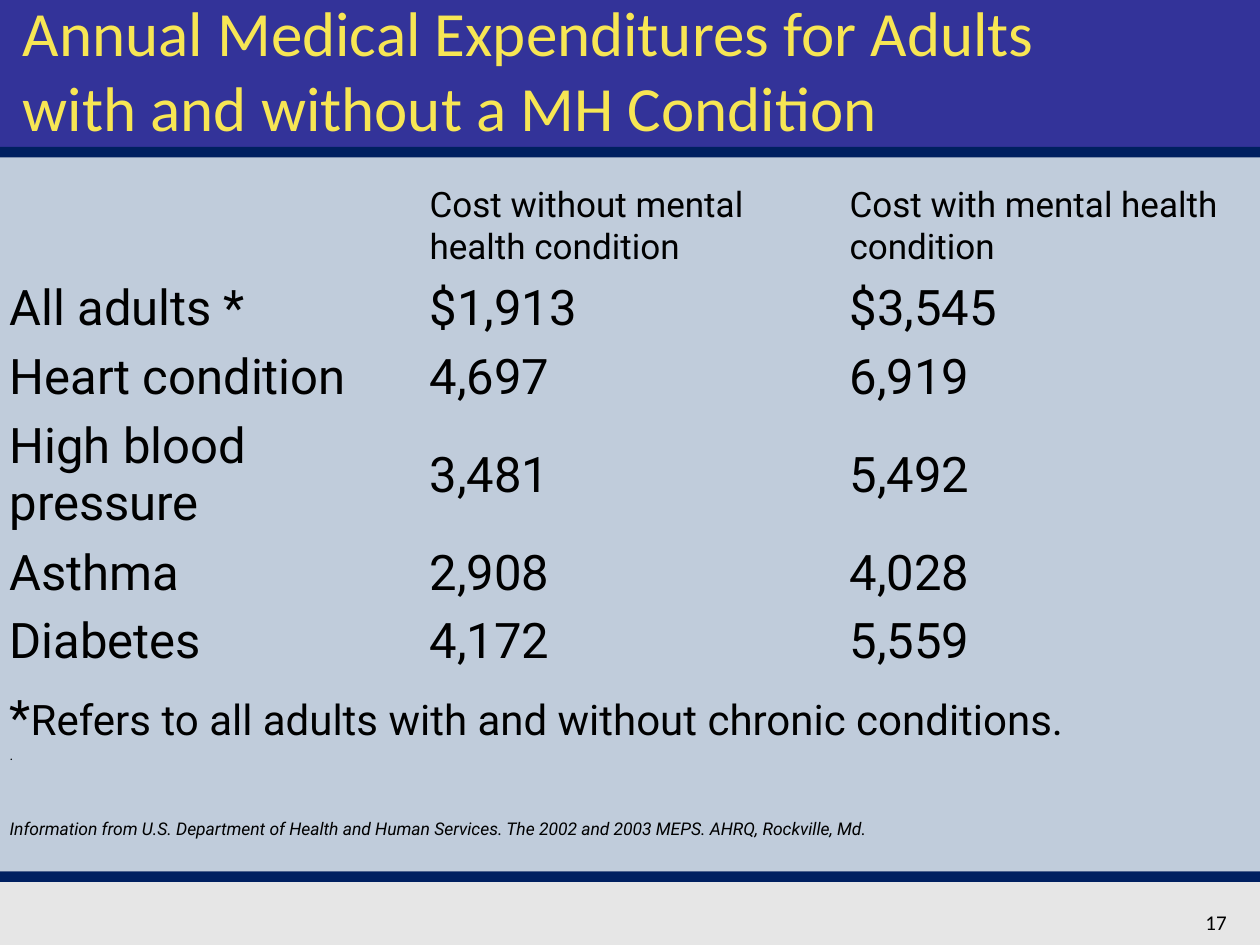
from dataclasses import dataclass

from lxml.etree import SubElement
from pptx import Presentation
from pptx.dml.color import RGBColor
from pptx.enum.shapes import MSO_SHAPE
from pptx.enum.text import MSO_ANCHOR, PP_ALIGN
from pptx.oxml.ns import qn
from pptx.util import Pt


@dataclass(frozen=True)
class Theme:
    background: str = "E6E6E6"
    panel: str = "4F81BD"
    banner: str = "333399"
    rule: str = "002060"
    title: str = "F7E654"
    ink: str = "000000"
    heading_font: str = "Calibri"
    body_font: str = "Roboto"
    title_size: int = 36
    body_size: int = 28
    note_size: int = 24
    header_size: int = 20
    number_size: int = 12
    source_size: int = 10
    dot_size: int = 8
    plain_table: str = "{2D5ABB26-0587-4C30-8999-92F81FD0307C}"


class SlideBuilder:
    def __init__(self, slide, theme):
        self.slide = slide
        self.theme = theme
        slide.background.fill.solid()
        slide.background.fill.fore_color.rgb = RGBColor.from_string(theme.background)

    def style(self, font, size, name, color):
        font.size = Pt(size)
        font.name = name
        font.color.rgb = RGBColor.from_string(color)

    def band(self, top, height, color, opacity=None):
        band = self.slide.shapes.add_shape(
            MSO_SHAPE.RECTANGLE, 0, Pt(top), Pt(720), Pt(height))
        band.shadow.inherit = False
        band.line.fill.background()
        band.fill.solid()
        band.fill.fore_color.rgb = RGBColor.from_string(color)
        if opacity is not None:
            tint = band.fill._xPr.find(qn("a:solidFill"))[0]
            SubElement(tint, qn("a:alpha")).set("val", str(opacity * 1000))

    def text(self, left, top, width, height, words, size, color,
             align=PP_ALIGN.LEFT, anchor=MSO_ANCHOR.TOP, bottom_inset=3.6):
        frame = self.slide.shapes.add_textbox(
            Pt(left), Pt(top), Pt(width), Pt(height)).text_frame
        frame.word_wrap = True
        frame.vertical_anchor = anchor
        frame.margin_bottom = Pt(bottom_inset)
        paragraph = frame.paragraphs[0]
        paragraph.text = words
        paragraph.alignment = align
        self.style(paragraph.font, size, self.theme.heading_font, color)

    def table(self, top, column_width, heights, rows):
        columns = len(rows[0])
        table = self.slide.shapes.add_table(
            len(heights), columns, 0, Pt(top),
            Pt(column_width * columns), Pt(sum(heights))).table
        table.first_row = table.horz_banding = False
        table._tbl.tblPr.find(qn("a:tableStyleId")).text = self.theme.plain_table
        for row, height in zip(table.rows, heights):
            row.height = Pt(height)
        for cell in table.iter_cells():
            cell.fill.background()
            cell.vertical_anchor = MSO_ANCHOR.MIDDLE
            cell.margin_left = cell.margin_right = Pt(5.5)
            cell.margin_top = cell.margin_bottom = Pt(2.75)
        for r, row in enumerate(rows):
            size = self.theme.body_size if r else self.theme.header_size
            for c, words in enumerate(row):
                paragraph = table.cell(r, c).text_frame.paragraphs[0]
                paragraph.text = words
                self.style(paragraph.font, size, self.theme.body_font, self.theme.ink)
        return table

    def footnote(self, cell, pieces, source, gap):
        note = cell.text_frame.paragraphs[0]
        for words, size, starts_line in pieces:
            if starts_line:
                note.add_line_break()
            run = note.add_run()
            run.text = words
            self.style(run.font, size, self.theme.body_font, self.theme.ink)
        credit = cell.text_frame.add_paragraph()
        credit.text = source
        credit.space_before = Pt(gap)
        self.style(credit.font, self.theme.source_size, self.theme.body_font, self.theme.ink)
        credit.font.italic = True


def main():
    presentation = Presentation()
    presentation.slide_width, presentation.slide_height = Pt(720), Pt(540)
    theme = Theme()
    builder = SlideBuilder(
        presentation.slides.add_slide(presentation.slide_layouts[6]), theme)

    builder.band(84, 414, theme.panel, opacity=25)
    builder.band(0, 84, theme.banner)
    for rule_top in (498, 84):
        builder.band(rule_top, 6, theme.rule)

    builder.text(6, 7, 642, 108,
                 "Annual Medical Expenditures for Adults with and without a MH Condition",
                 theme.title_size, theme.title, anchor=MSO_ANCHOR.MIDDLE, bottom_inset=47)
    builder.text(540, 516, 168, 37.5, "17", theme.number_size, theme.ink,
                 align=PP_ALIGN.RIGHT)

    costs = [
        ("", "Cost without mental health condition", "Cost with mental health condition"),
        ("All adults *", "$1,913", "$3,545"),
        ("Heart condition", "4,697", "6,919"),
        ("High blood pressure", "3,481", "5,492"),
        ("Asthma", "2,908", "4,028"),
        ("Diabetes", "4,172", "5,559"),
    ]
    single, double = 38, 71
    heights = [55, single, single, double, single, single, 101.5]
    expenditures = builder.table(102, 240, heights, costs)

    last = len(costs)
    note_cell = expenditures.cell(last, 0)
    note_cell.merge(expenditures.cell(last, 2))
    builder.footnote(
        note_cell,
        [("*", theme.body_size, False),
         ("Refers to all adults with and without chronic conditions.", theme.note_size, False),
         (".", theme.dot_size, True)],
        "Information from U.S. Department of Health and Human Services. "
        "The 2002 and 2003 MEPS. AHRQ, Rockville, Md.",
        gap=32)

    presentation.save("out.pptx")


if __name__ == "__main__":
    main()
